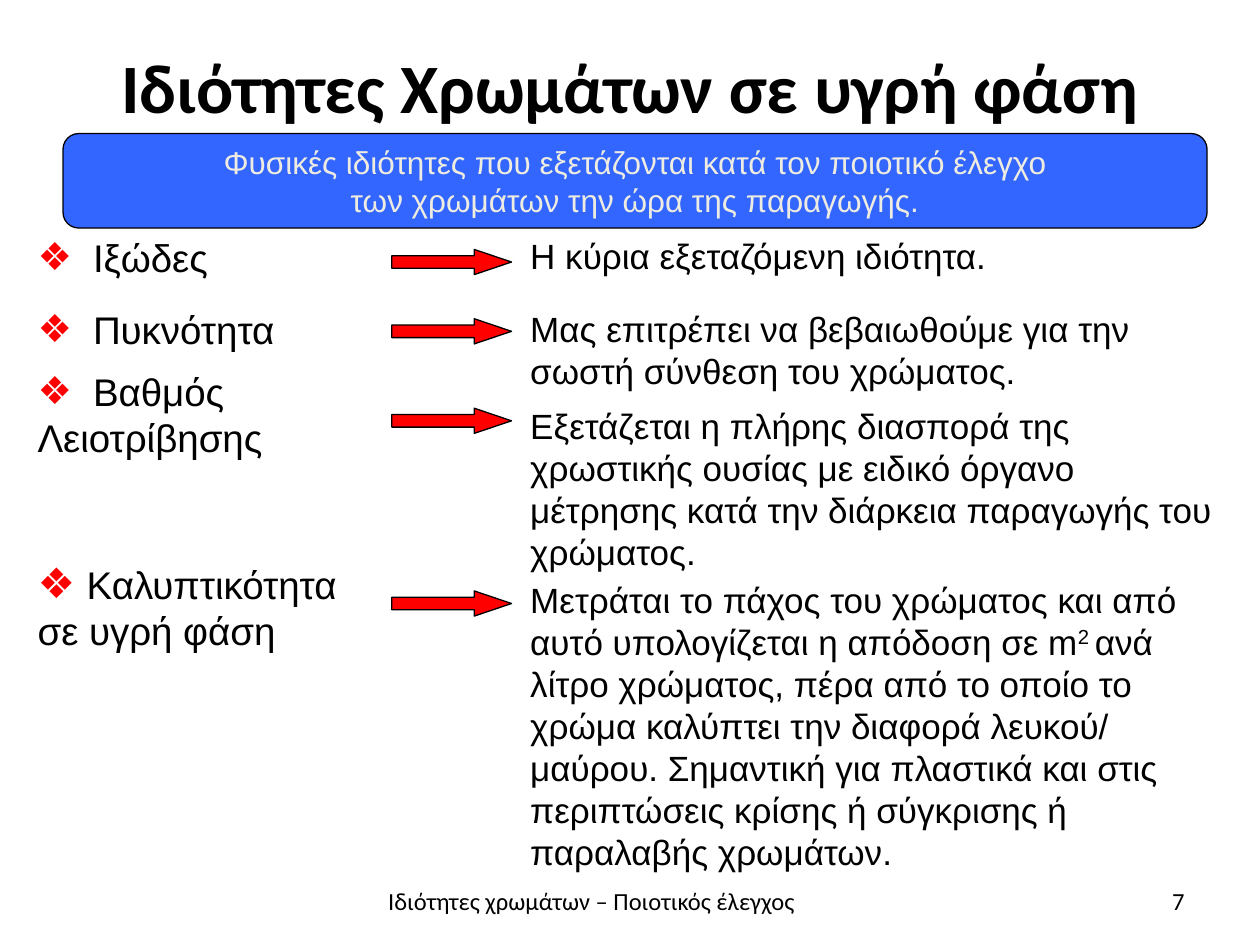
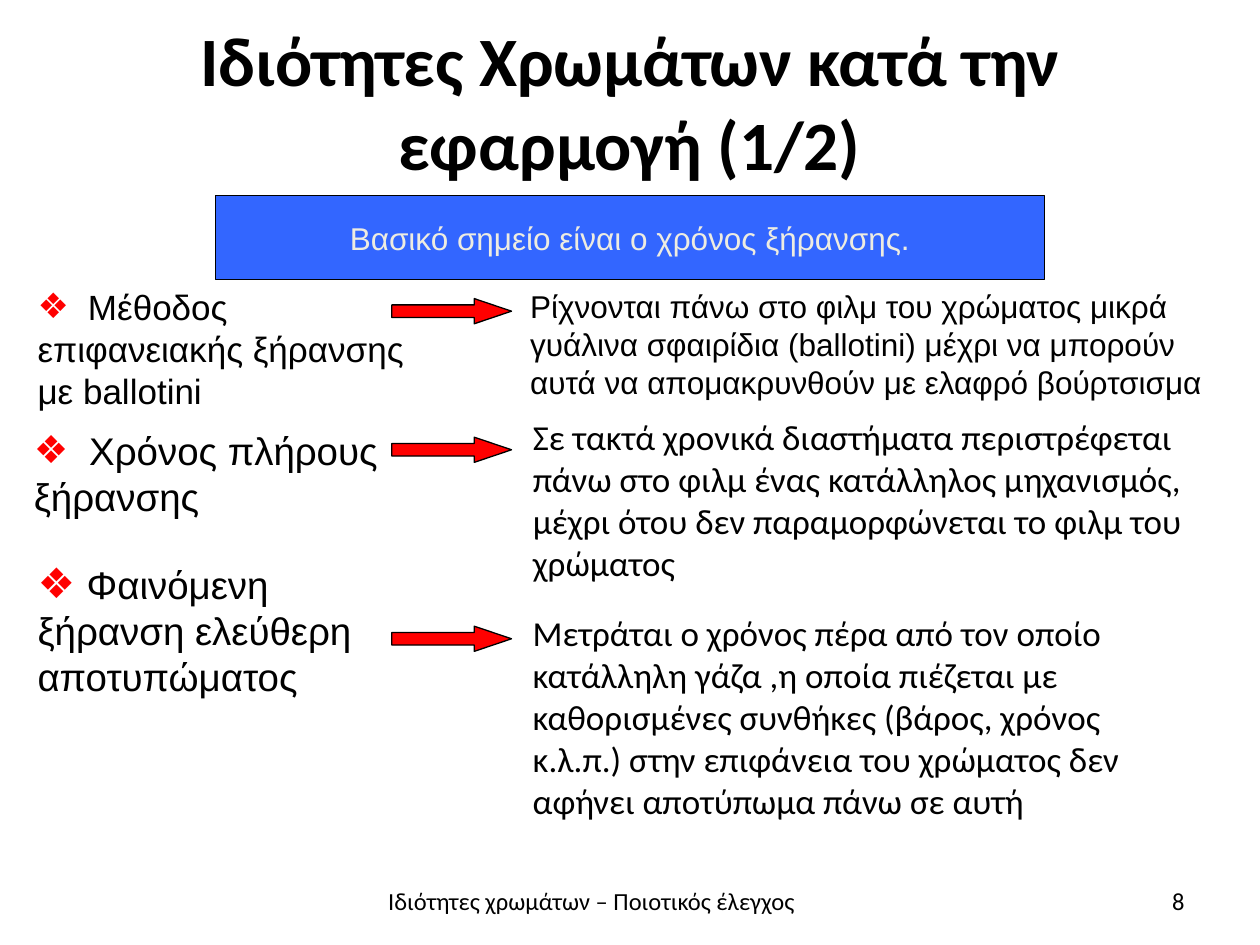
from dataclasses import dataclass

from lxml import etree
from pptx import Presentation
from pptx.dml.color import RGBColor
from pptx.enum.shapes import MSO_SHAPE
from pptx.enum.text import MSO_ANCHOR, PP_ALIGN
from pptx.oxml.ns import qn
from pptx.util import Inches, Pt

LEFT, CENTER, RIGHT = PP_ALIGN.LEFT, PP_ALIGN.CENTER, PP_ALIGN.RIGHT
TOP, MIDDLE = MSO_ANCHOR.TOP, MSO_ANCHOR.MIDDLE
ARROW, RECT = MSO_SHAPE.RIGHT_ARROW, MSO_SHAPE.RECTANGLE
ROUNDED = MSO_SHAPE.FLOWCHART_ALTERNATE_PROCESS

COLORS = {"text": "000000", "banner": "3366FF", "banner_text": "EEECE1",
          "accent": "FF0000", "line": "000000"}
HEADING, BODY = "Calibri", "Arial"
FOOTER = "Ιδιότητες χρωμάτων – Ποιοτικός έλεγχος"
ARROW_LEFT, ARROW_SIZE = 3.11, (0.95, 0.2)


@dataclass
class Property:
    """A bulleted property, its arrow and its explanation."""
    label: str
    label_at: tuple  # left, top, width, height
    arrow_top: float
    note: str
    note_at: tuple
    label_size: int = 22
    label_gap: float = 0.44  # from the bullet's left edge to the text
    bullet_scale: int = 100
    note_size: int = 20
    note_font: str = BODY


def rgb(name):
    return RGBColor.from_string(COLORS[name])


def write(s, text, size, font, color="text", align=LEFT, anchor=TOP, bold=False, wrap=True):
    """Fill a shape with text; parts between ^ signs are superscript."""
    tf = s.text_frame
    tf.word_wrap = wrap
    tf.vertical_anchor = anchor
    for i, line in enumerate(text.split("\n")):
        p = tf.paragraphs[0] if i == 0 else tf.add_paragraph()
        p.alignment = align
        for k, part in enumerate(line.split("^")):
            if k == 0:
                p.text = part
            else:
                p.add_run().text = part
            for r in p.runs if k == 0 else p.runs[-1:]:
                r.font.size = Pt(size)
                r.font.name = font
                r.font.bold = bold
                r.font.color.rgb = rgb(color)
                if k % 2:
                    r.font._element.set("baseline", "30000")
    return tf


def add_text(slide, at, text, size, font, **style):
    s = slide.shapes.add_textbox(*map(Inches, at))
    return write(s, text, size, font, **style)


def add_block(slide, kind, at, fill):
    s = slide.shapes.add_shape(kind, *map(Inches, at))
    s.shadow.inherit = False
    s.fill.solid()
    s.fill.fore_color.rgb = rgb(fill)
    s.line.color.rgb = rgb("line")
    s.line.width = Pt(0.75)
    return s


def add_bullet(p, gap, scale):
    """Red diamond bullet; a tab stop sets where the first line starts."""
    pPr = p._p.get_or_add_pPr()
    pPr.set("marL", "0")
    pPr.set("indent", "0")
    color = etree.SubElement(pPr, qn("a:buClr"))
    etree.SubElement(color, qn("a:srgbClr"), val=COLORS["accent"])
    etree.SubElement(pPr, qn("a:buSzPct"), val=str(scale * 1000))
    etree.SubElement(pPr, qn("a:buFont"), typeface=BODY)
    etree.SubElement(pPr, qn("a:buChar"), char="❖")
    tabs = etree.SubElement(pPr, qn("a:tabLst"))
    etree.SubElement(tabs, qn("a:tab"), pos=str(Inches(gap)), algn="l")


def add_property(slide, prop):
    tf = add_text(slide, prop.label_at, "\t" + prop.label, prop.label_size, BODY)
    add_bullet(tf.paragraphs[0], prop.label_gap, prop.bullet_scale)
    arrow = add_block(slide, ARROW, (ARROW_LEFT, prop.arrow_top, *ARROW_SIZE), "accent")
    arrow.adjustments[0] = 0.5
    arrow.adjustments[1] = 1.48
    add_text(slide, prop.note_at, prop.note, prop.note_size, prop.note_font)


def add_slide(prs, number, title, title_height, banner, banner_kind, banner_at, properties):
    slide = prs.slides.add_slide(prs.slide_layouts[6])
    add_text(slide, (0.5, 0.21, 9, title_height), title, 39.6, HEADING,
             align=CENTER, anchor=MIDDLE, bold=True)
    s = add_block(slide, banner_kind, banner_at, "banner")
    write(s, banner, 18, BODY, "banner_text", CENTER, MIDDLE, wrap=False)
    for prop in properties:
        add_property(slide, prop)
    # Footer and slide number
    add_text(slide, (2.8, 6.95, 3.79, 0.4), FOOTER, 14, HEADING, align=CENTER, anchor=MIDDLE)
    add_text(slide, (7.17, 6.95, 2.33, 0.4), str(number), 14, HEADING,
             align=RIGHT, anchor=MIDDLE)


LIQUID_PHASE = [
    Property("Ιξώδες", (0.2, 1.81, 3.2, 0.56), 1.98,
             "Η κύρια εξεταζόμενη ιδιότητα.", (4.11, 1.81, 5.52, 0.62)),
    Property("Πυκνότητα", (0.2, 2.38, 3.33, 0.5), 2.53,
             "Μας επιτρέπει να βεβαιωθούμε για την σωστή σύνθεση του χρώματος.",
             (4.11, 2.39, 5.68, 0.77)),
    Property("Βαθμός Λειοτρίβησης", (0.2, 2.87, 3.34, 1.04), 3.24,
             "Εξετάζεται η πλήρης διασπορά της χρωστικής ουσίας με ειδικό όργανο "
             "μέτρησης κατά την διάρκεια παραγωγής του χρώματος.",
             (4.11, 3.16, 5.68, 1.45)),
    Property("Καλυπτικότητα\vσε υγρή φάση", (0.2, 4.4, 3.07, 0.88), 4.69,
             "Μετράται το πάχος του χρώματος και από αυτό υπολογίζεται η απόδοση σε "
             "m^2 ^ανά λίτρο χρώματος, πέρα από το οποίο το χρώμα καλύπτει την διαφορά "
             "λευκού/ μαύρου. Σημαντική για πλαστικά και στις περιπτώσεις κρίσης ή "
             "σύγκρισης ή παραλαβής χρωμάτων.",
             (4.11, 4.54, 5.68, 2.46), label_gap=0.39, bullet_scale=109),
]

APPLICATION = [
    Property("Μέθοδος επιφανειακής ξήρανσης με ballotini", (0.2, 2.22, 3.33, 1.02), 2.37,
             "Ρίχνονται πάνω στο φιλμ του χρώματος μικρά γυάλινα σφαιρίδια (ballotini) "
             "μέχρι να μπορούν αυτά να απομακρυνθούν με ελαφρό βούρτσισμα",
             (4.11, 2.23, 5.68, 1.01), label_size=20, label_gap=0.4, note_size=18),
    Property("Χρόνος πλήρους ξήρανσης", (0.17, 3.34, 3.34, 1.2), 3.47,
             "Σε τακτά χρονικά διαστήματα περιστρέφεται πάνω στο φιλμ ένας κατάλληλος "
             "μηχανισμός, μέχρι ότου δεν παραμορφώνεται το φιλμ του χρώματος",
             (4.13, 3.25, 5.51, 1.45), note_font=HEADING),
    Property("Φαινόμενη ξήρανση ελεύθερη αποτυπώματος", (0.2, 4.4, 3.07, 2.44), 4.97,
             "Μετράται ο χρόνος πέρα από τον οποίο κατάλληλη γάζα ,η οποία πιέζεται με "
             "καθορισμένες συνθήκες (βάρος, χρόνος κ.λ.π.) στην επιφάνεια του χρώματος "
             "δεν αφήνει αποτύπωμα πάνω σε αυτή",
             (4.13, 4.8, 5, 1.78), label_gap=0.39, bullet_scale=109, note_font=HEADING),
]


def main():
    prs = Presentation()
    prs.slide_width, prs.slide_height = Inches(10), Inches(7.5)
    add_slide(prs, 7, "Ιδιότητες Χρωμάτων σε υγρή φάση", 0.94,
              "Φυσικές ιδιότητες που εξετάζονται κατά τον ποιοτικό έλεγχο\n"
              "των χρωμάτων την ώρα της παραγωγής.",
              ROUNDED, (0.5, 1.06, 9.08, 0.75), LIQUID_PHASE)
    add_slide(prs, 8, "Ιδιότητες Χρωμάτων κατά την εφαρμογή (1/2)", 1.18,
              "Βασικό σημείο είναι ο χρόνος ξήρανσης.",
              RECT, (1.71, 1.55, 6.58, 0.67), APPLICATION)
    prs.save("out.pptx")


if __name__ == "__main__":
    main()
